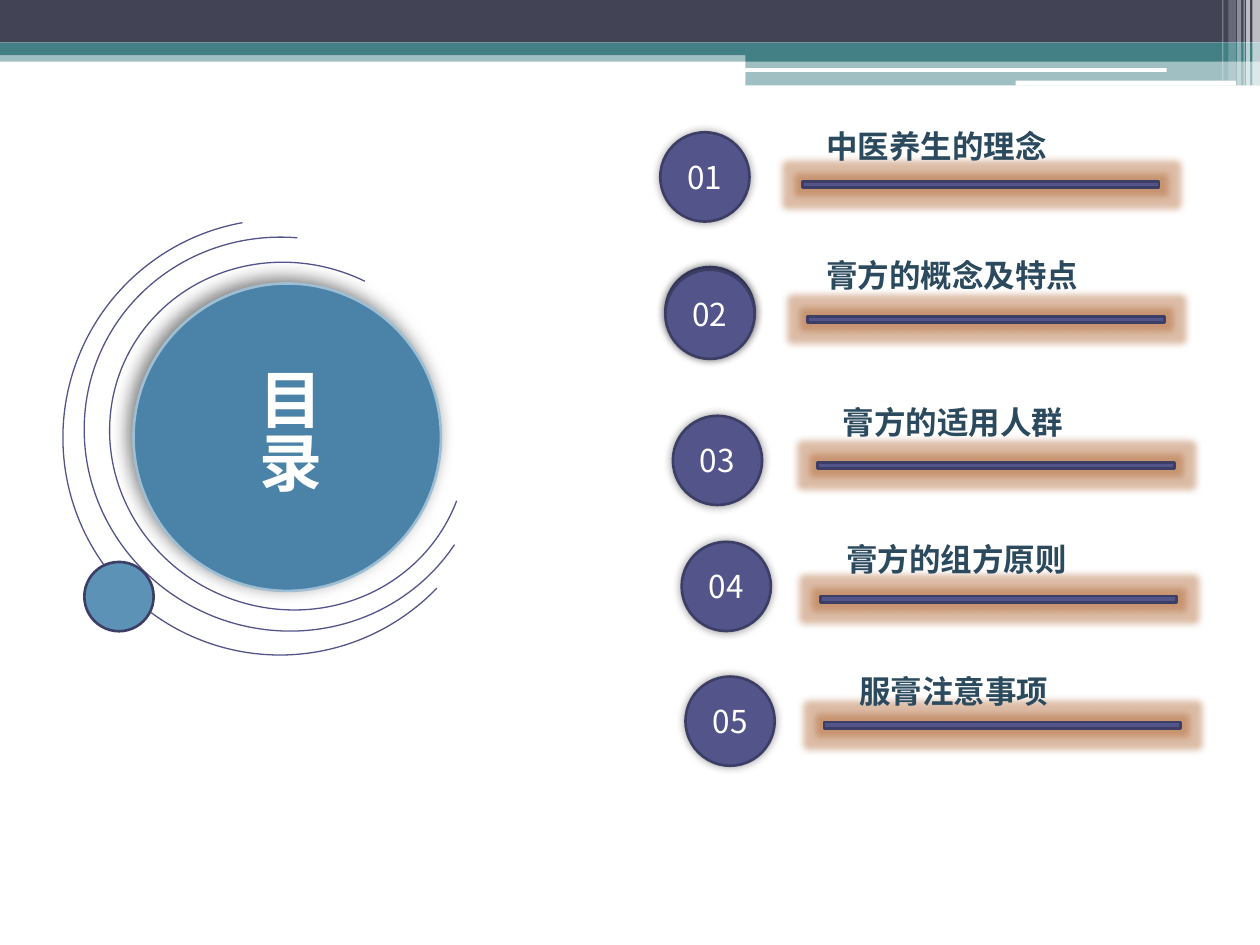
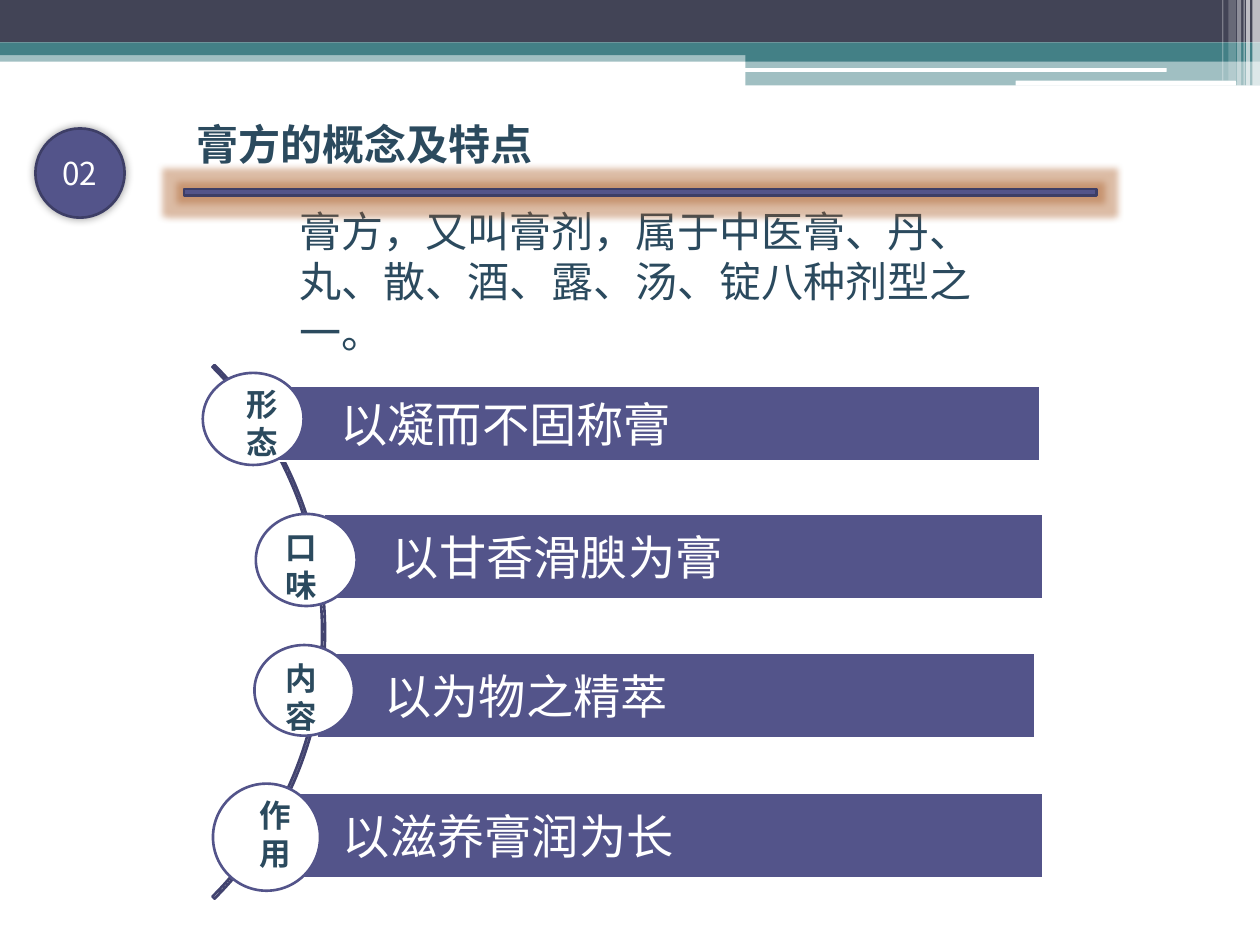
"""Builds two slides: a table of contents and the concept of herbal paste."""
from collections import namedtuple

from lxml import etree
from pptx import Presentation
from pptx.dml.color import RGBColor
from pptx.enum import shapes as kinds, text as texts
from pptx.oxml import ns
from pptx.util import Pt

WHITE = RGBColor(0xFF, 0xFF, 0xFF)
BLACK = RGBColor(0, 0, 0)
SLATE = RGBColor(0x42, 0x44, 0x56)
TEAL = RGBColor(0x43, 0x80, 0x86)
INDIGO = RGBColor(0x53, 0x54, 0x8A)
INDIGO_EDGE = RGBColor(0x3D, 0x3E, 0x66)
ARC_EDGE = RGBColor(0x42, 0x43, 0x6F)
BLUE = RGBColor(0x4B, 0x82, 0xA7)
BLUE_EDGE = RGBColor(0x9D, 0xBE, 0xD3)
SKY = RGBColor(0x5C, 0x92, 0xB5)
INK = RGBColor(0x2B, 0x4A, 0x5E)
GLOW = RGBColor(0xA8, 0x58, 0x20)
SANS, SERIF = "Noto Sans CJK SC", "TeX Gyre Schola"
PRESET = kinds.MSO_SHAPE
LEFT, CENTER = texts.PP_ALIGN.LEFT, texts.PP_ALIGN.CENTER
TOP, MIDDLE = texts.MSO_ANCHOR.TOP, texts.MSO_ANCHOR.MIDDLE
BADGE_SIZE = 51

Box = namedtuple("Box", "left top width height")


def child(parent, tag, **attributes):
    """Append a drawing element with attributes and return it."""
    element = etree.SubElement(parent, ns.qn(tag))
    for name, value in attributes.items():
        element.set(name, str(value))
    return element


def place(shape, box):
    """Move a shape into a box given in points."""
    shape.left, shape.top, shape.width, shape.height = map(Pt, box)


def draw(page, preset, box, fill=None, edge=None, weight=1.5, opacity=100):
    """Add a preset shape without shadow."""
    shape = page.shapes.add_shape(preset, *map(Pt, box))
    shape.shadow.inherit = False
    if fill is None:
        shape.fill.background()
    else:
        shape.fill.solid()
        shape.fill.fore_color.rgb = fill
        if opacity < 100:
            color = shape.element.spPr.find(".//" + ns.qn("a:srgbClr"))
            child(color, "a:alpha", val=opacity * 1000)
    if edge is None:
        shape.line.fill.background()
    else:
        shape.line.color.rgb = edge
        shape.line.width = Pt(weight)
    return shape


def add_effect(shape, tag, color, opacity, **attributes):
    """Give a shape a glow or an outer shadow."""
    effects = shape.element.spPr.find(ns.qn("a:effectLst"))
    effect = child(effects, tag, **attributes)
    child(child(effect, "a:srgbClr", val=color), "a:alpha", val=opacity * 1000)


def add_shadow(shape, opacity, blur, distance=0, angle=0):
    """Give a shape a soft black shadow."""
    add_effect(shape, "a:outerShdw", BLACK, opacity, blurRad=Pt(blur),
               dist=Pt(distance), dir=angle * 60000, algn="ctr", rotWithShape=0)


def write(shape, words, size, color, font=SANS, bold=False, align=LEFT,
          anchor=TOP, insets=(7.2, 3.6, 7.2, 3.6)):
    """Set and format the only paragraph of a shape."""
    frame = shape.text_frame
    frame.text = words
    frame.word_wrap = True
    frame.auto_size = texts.MSO_AUTO_SIZE.NONE
    frame.vertical_anchor = anchor
    (frame.margin_left, frame.margin_top,
     frame.margin_right, frame.margin_bottom) = map(Pt, insets)
    para = frame.paragraphs[0]
    para.alignment = align
    para.line_spacing = Pt(round(size * 1.2, 1))
    para.space_before = Pt(0)
    span = para.runs[0].font
    span.name, span.size, span.bold = font, Pt(size), bold
    span.color.rgb = color
    child(para.runs[0]._r.get_or_add_rPr(), "a:ea", typeface=SANS)


def label(page, words, box, size, font=SANS):
    """Add a bold dark text box."""
    write(page.shapes.add_textbox(*map(Pt, box)), words, size, INK, font, True)


def badge(page, number, left, top):
    """Add a numbered round badge."""
    disc = draw(page, PRESET.OVAL, (left, top, BADGE_SIZE, BADGE_SIZE), INDIGO, INDIGO_EDGE)
    add_shadow(disc, 40, 5)
    write(disc, number, 18, WHITE, align=CENTER, anchor=MIDDLE, insets=(0, 0, 0, 0))


def glowing_rule(page, left, top, width):
    """Add a thin bar with a warm glow."""
    rule = draw(page, PRESET.RECTANGLE, (left, top, width, 3.6), INDIGO, INDIGO_EDGE)
    add_effect(rule, "a:glow", GLOW, 40, rad=Pt(8))


def header_band(page, layout, box):
    """Draw the shared top band and hand it to the layout."""
    half = box.left + 426
    rest = box.width - 426
    blocks = [
        ((box.left, 28.8, box.width, 6.5), TEAL, 50),
        ((box.left, 0, box.width, 24.3), SLATE, 100),
        ((box.left, 24.3, box.width, 7.2), TEAL, 100),
        ((half, 28.1, rest, 7.2), TEAL, 100),
        ((half, 35.2, rest, 13.6), TEAL, 50),
    ]
    lines = [(425.5, 38.9, 241.2, 2.2), (580.3, 46.1, 126, 2.9)]
    stripes = [(715.7, 4.3, 48.9, 65), (712.1, 2.2, 48.9, 65), (710.6, 0.7, 48.9, 60),
               (707, 2.2, 48.9, 40), (702, 4.3, 46.1, 20), (698.4, 0.7, 46.1, 30)]
    parts = [draw(page, PRESET.RECTANGLE, area, color, opacity=opacity)
             for area, color, opacity in blocks]
    parts += [draw(page, PRESET.ROUNDED_RECTANGLE, area, WHITE) for area in lines]
    parts += [draw(page, PRESET.RECTANGLE, (left, box.top, width, height), WHITE, opacity=opacity)
              for left, width, height, opacity in stripes]
    for part in parts:
        layout.shapes.element.append(part.element)


def contents_emblem(page, box):
    """Draw the large disc with its arcs and the vertical title."""
    def area(left, top, width, height):
        return box.left + left, box.top + top, width, height

    disc = draw(page, PRESET.OVAL, area(40.3, 36.7, 175.7, 175.7), BLUE, BLUE_EDGE)
    add_shadow(disc, 50, 10, 4, 225)
    arcs = [(area(25.9, 25.2, 205.9, 197.3), 160.78, 109.91),
            (area(11.5, 10.8, 231.1, 223.9), 174.42, 102.62),
            (area(0, 0, 248.4, 249.1), 182.53, 96.12)]
    for ring, start, end in arcs:
        arc = draw(page, PRESET.ARC, ring, edge=INDIGO, weight=0.75)
        arc.adjustments[0], arc.adjustments[1] = start, end
        arc.rotation = 204.2
        arc.element.spPr.find(ns.qn("a:xfrm")).set("flipV", "1")
    title = page.shapes.title
    place(title, area(99.4, 81.4, 58.3, 85))
    write(title, "目录", 36, WHITE, bold=True)
    title.text_frame._txBody.bodyPr.set("vert", "eaVert")
    page.shapes.element.append(title.element)
    draw(page, PRESET.OVAL, area(12.2, 195.8, 39.6, 39.6), SKY, INDIGO_EDGE)


def topic_row(page, number, words, box, rule_offset, words_offset):
    """Add a badge, its glowing rule and its heading."""
    badge(page, number, box.left, box.top)
    glowing_rule(page, box.left + rule_offset[0], box.top + rule_offset[1], 203.8)
    label(page, words, (box.left + words_offset[0], box.top + words_offset[1], box.width, 28.8),
          18, SERIF)


def contents_slide(page):
    """Build the table of contents."""
    contents_emblem(page, Box(36, 125.3, 248.4, 249.1))
    badge(page, "02", 380.2, 152.6)
    topics = [
        ("中医养生的理念", (377.3, 75.6), (81.3, 28.1), (87.8, -6.5)),
        ("膏方的概念及特点", (380.2, 154.1), (81.3, 26.6), (84.9, -11.5)),
        ("膏方的适用人群", (384.5, 237.6), (82.8, 26.6), (90, -10.8)),
        ("膏方的组方原则", (389.5, 309.6), (79.2, 31), (87.1, -4.3)),
        ("服膏注意事项", (391.7, 386.6), (79.2, 26), (92.1, -6.4)),
    ]
    for index, (words, corner, rule_offset, words_offset) in enumerate(topics, 1):
        topic_row(page, f"{index:02}", words, Box(*corner, 190, BADGE_SIZE),
                  rule_offset, words_offset)


def section_heading(page, box):
    """Place the badge, rule, title and definition."""
    badge(page, "02", box.left, box.top)
    glowing_rule(page, box.left + 85, box.top + 34.6, 521.3)
    title, body = page.shapes.title, page.placeholders[1]
    place(title, (box.left + 85, box.top - 9.4, 226.8, 36))
    write(title, "膏方的概念及特点", 24, INK, bold=True)
    place(body, (box.left + 144, box.top + 40.4, 402.5, 94.3))
    write(body, "膏方，又叫膏剂，属于中医膏、丹、丸、散、酒、露、汤、锭八种剂型之一。", 24, INK)
    settings = body.text_frame.paragraphs[0]._p.get_or_add_pPr()
    settings.set("marL", "0")
    settings.set("indent", "0")
    child(settings, "a:buNone")


def feature(page, name, words, bar, disc, caption):
    """Add one feature bar with its round caption."""
    strip = draw(page, PRESET.RECTANGLE, bar, INDIGO, WHITE)
    write(strip, words, 27, WHITE, SERIF, anchor=MIDDLE, insets=(39, 5, 5, 5))
    draw(page, PRESET.OVAL, disc, WHITE, INDIGO)
    return name, caption


def feature_list(page, box):
    """Draw the curve and the four features along it."""
    curve = draw(page, PRESET.BLOCK_ARC, (box.left - 367, box.top - 67.7, 431.3, 431.3),
                 edge=ARC_EDGE)
    for index, value in enumerate((189, 27, 0.004)):
        curve.adjustments[index] = value
    features = [
        ("形态", "以凝而不固称膏", (34, 7.2, 439.2, 43.2), (-5.6, 0, 57.6, 52.6), (12.4, 3.6, 31)),
        ("口味", "以甘香滑腴为膏", (63.5, 80.6, 411.1, 49), (24.7, 80.6, 57.6, 52.6), (34.7, 85, 22.3)),
        ("内容", "以为物之精萃", (59.2, 159.8, 411.1, 49), (23.9, 155.5, 56.9, 51.8), (34.7, 159.8, 22.3)),
        ("作用", "以滋养膏润为长", (35.4, 239.7, 439.2, 49), (0.2, 234.7, 61.2, 61.2), (19.6, 238.3, 31)),
    ]

    def area(left, top, width, height):
        return box.left + left, box.top + top, width, height

    captions = [feature(page, name, words, area(*bar), area(*disc), area(*caption, 51.1))
                for name, words, bar, disc, caption in features]
    for name, caption in captions:
        label(page, name, caption, 18)


def concept_slide(page):
    """Build the concept slide."""
    section_heading(page, Box(20.2, 73.4, 606.3, 135))
    feature_list(page, Box(121.5, 213.1, 475, 296))


def main():
    """Assemble and save the deck."""
    deck = Presentation()
    deck.slide_width, deck.slide_height = Pt(720), Pt(540)
    builders = [(deck.slide_layouts[5], contents_slide), (deck.slide_layouts[1], concept_slide)]
    for layout, build in builders:
        page = deck.slides.add_slide(layout)
        header_band(page, layout, Box(0, 0, 720, 48.9))
        build(page)
    deck.save("out.pptx")


if __name__ == "__main__":
    main()
